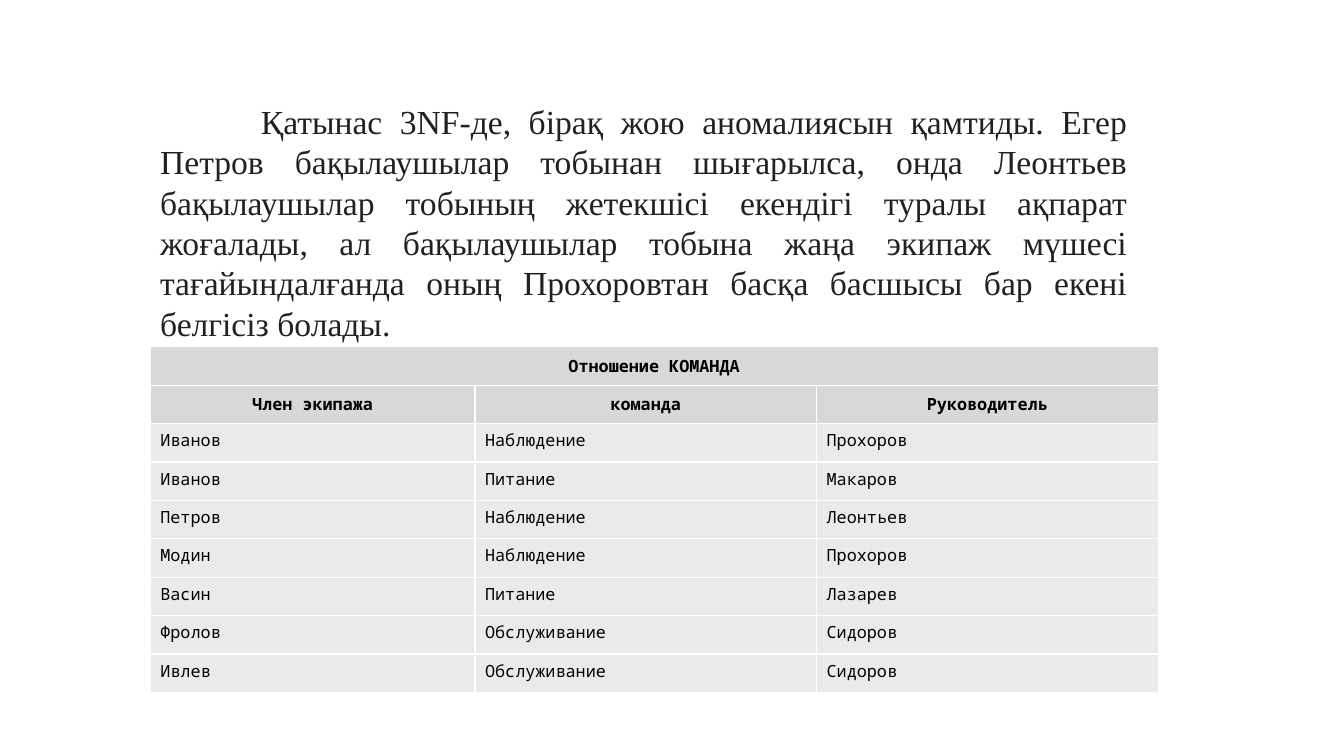
from dataclasses import dataclass

from pptx import Presentation
from pptx import util as u
from pptx.dml.color import RGBColor
from pptx.enum import text

LEFT = 107.3
COLUMN_WIDTHS = (232, 244, 244)
ROW_HEIGHT = 27.44
EXPLANATION = (
    "Қатынас 3NF-де, бірақ жою аномалиясын қамтиды. Егер Петров бақылаушылар "
    "тобынан шығарылса, онда Леонтьев бақылаушылар тобының жетекшісі екендігі "
    "туралы ақпарат жоғалады, ал бақылаушылар тобына жаңа экипаж мүшесі "
    "тағайындалғанда оның Прохоровтан басқа басшысы бар екені белгісіз болады."
)


@dataclass(frozen=True)
class CellStyle:
    fill: str
    bold: bool
    alignment: text.PP_ALIGN
    anchor: text.MSO_ANCHOR


HEADER = CellStyle("D8D8D8", True, text.PP_ALIGN.CENTER, text.MSO_ANCHOR.MIDDLE)
BODY = CellStyle("EAEAEA", False, text.PP_ALIGN.LEFT, text.MSO_ANCHOR.TOP)

TITLE = "Отношение КОМАНДА"
HEADINGS = ("Член экипажа", "команда", "Руководитель")
CREW = (
    ("Иванов", "Наблюдение", "Прохоров"),
    ("Иванов", "Питание", "Макаров"),
    ("Петров", "Наблюдение", "Леонтьев"),
    ("Модин", "Наблюдение", "Прохоров"),
    ("Васин", "Питание", "Лазарев"),
    ("Фролов", "Обслуживание", "Сидоров"),
    ("Ивлев", "Обслуживание", "Сидоров"),
)


def color(value: str) -> RGBColor:
    return RGBColor.from_string(value)


def set_font(paragraph, name: str, size: float, value: str, bold: bool = False) -> None:
    font = paragraph.font
    font.name, font.size, font.bold = name, u.Pt(size), bold
    font.color.rgb = color(value)


def fill_cell(cell, content: str, style: CellStyle) -> None:
    cell.fill.solid()
    cell.fill.fore_color.rgb = color(style.fill)
    cell.vertical_anchor = style.anchor
    paragraph = cell.text_frame.paragraphs[0]
    paragraph.text = content
    paragraph.alignment = style.alignment
    set_font(paragraph, "Noto Sans Mono", 12, "000000", style.bold)


def add_crew_table(slide) -> None:
    rows = [(TITLE, "", ""), HEADINGS, *CREW]
    table = slide.shapes.add_table(
        len(rows), len(COLUMN_WIDTHS), u.Pt(LEFT), u.Pt(247.7),
        u.Pt(sum(COLUMN_WIDTHS)), u.Pt(ROW_HEIGHT * len(rows)),
    ).table
    table.first_row = table.horz_banding = False
    for column, width in zip(table.columns, COLUMN_WIDTHS):
        column.width = u.Pt(width)
    for row_index, values in enumerate(rows):
        table.rows[row_index].height = u.Pt(ROW_HEIGHT)
        style = HEADER if row_index < 2 else BODY
        for column_index, content in enumerate(values):
            fill_cell(table.cell(row_index, column_index), content, style)
    table.cell(0, 0).merge(table.cell(0, len(COLUMN_WIDTHS) - 1))


def add_explanation(slide) -> None:
    box = slide.shapes.add_textbox(u.Pt(LEFT), u.Pt(37.4), u.Pt(705), u.Pt(211))
    frame = box.text_frame
    frame.word_wrap = True
    frame.vertical_anchor = text.MSO_ANCHOR.BOTTOM
    paragraph = frame.paragraphs[0]
    paragraph.text = EXPLANATION
    paragraph.alignment = text.PP_ALIGN.JUSTIFY
    paragraph._p.get_or_add_pPr().set("indent", str(u.Pt(72)))
    set_font(paragraph, "Times New Roman", 24, "202124")


def main() -> None:
    presentation = Presentation()
    presentation.slide_width = u.Pt(960)
    presentation.slide_height = u.Pt(540)
    slide = presentation.slides.add_slide(presentation.slide_layouts[6])
    add_crew_table(slide)
    add_explanation(slide)
    presentation.save("out.pptx")


if __name__ == "__main__":
    main()
